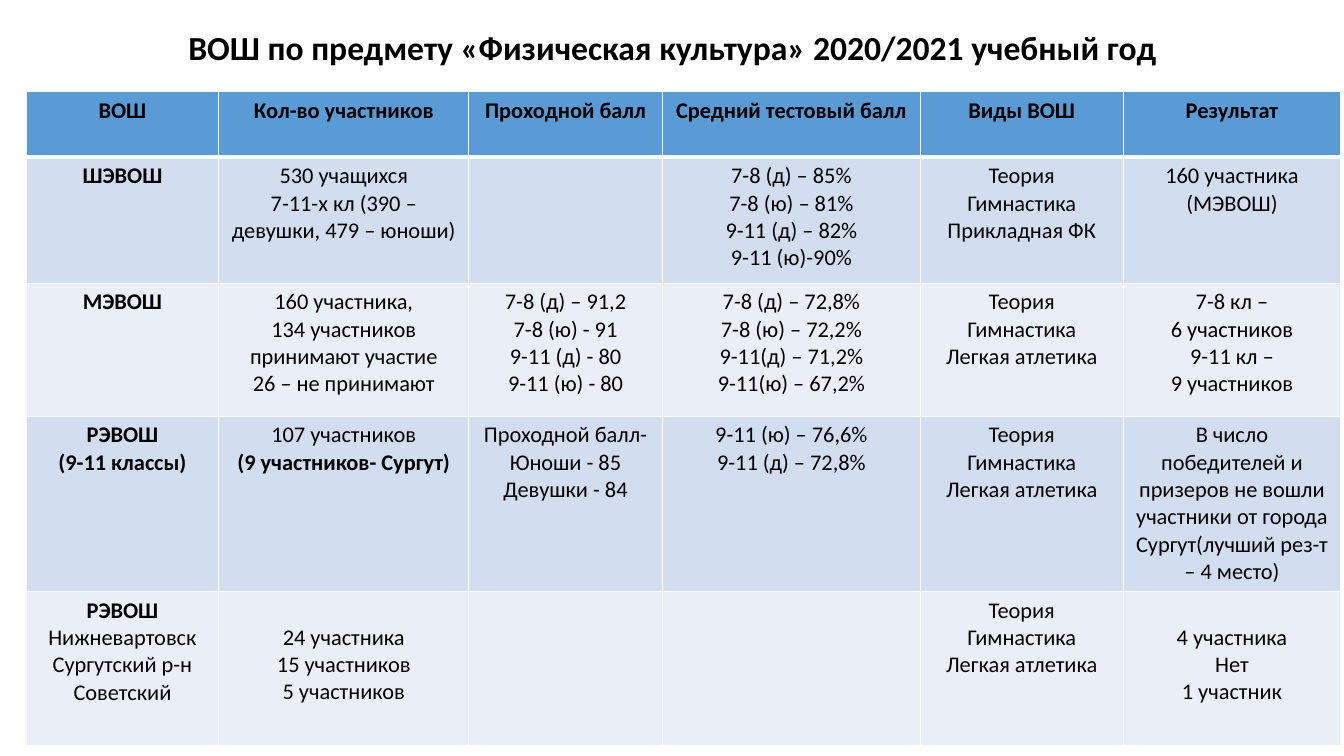
from dataclasses import dataclass

from lxml import etree
from pptx import Presentation
from pptx.dml.color import RGBColor
from pptx.enum.text import MSO_ANCHOR, PP_ALIGN
from pptx.oxml.ns import qn
from pptx.util import Inches, Pt

CENTER = PP_ALIGN.CENTER
MIDDLE = MSO_ANCHOR.MIDDLE
BLANK_LAYOUT = 6


@dataclass(frozen=True)
class Theme:
    font: str = "Calibri"
    title_size: int = 24
    table_size: int = 16
    text: str = "000000"
    header: str = "5B9BD5"
    bands: tuple = ("D2DEEF", "EAEFF7")
    border: str = "FFFFFF"
    thin: int = 1
    thick: int = 3


THEME = Theme()

# Table content: each cell is a list of lines
TITLE = "ВОШ по предмету «Физическая культура» 2020/2021 учебный год"
COLUMN_WIDTHS = (1.91, 2.48, 1.92, 2.56, 2.01, 2.16)
ROW_HEIGHTS = (0.65, 1.25, 1.32, 1.74, 1.53)
HEADERS = ["ВОШ", "Кол-во участников", "Проходной балл",
           "Средний тестовый балл", "Виды ВОШ", "Результат"]
SCHOOL_EVENTS = ["Теория", "Гимнастика", "Прикладная ФК"]
EVENTS = ["Теория", "Гимнастика", "Легкая атлетика"]
STAGES = [
    [["ШЭВОШ"],
     ["530 учащихся", "7-11-х кл (390 – девушки, 479 – юноши)"],
     [],
     ["7-8 (д) – 85%", "7-8 (ю) – 81%", "9-11 (д) – 82%", "9-11 (ю)-90%"],
     SCHOOL_EVENTS,
     ["160 участника", "(МЭВОШ)"]],
    [["МЭВОШ"],
     ["160 участника,", "134 участников принимают участие", "26 – не принимают"],
     ["7-8 (д) – 91,2", "7-8 (ю) - 91", "9-11 (д) - 80", "9-11 (ю) - 80"],
     ["7-8 (д) – 72,8%", "7-8 (ю) – 72,2%", "9-11(д) – 71,2%", "9-11(ю) – 67,2%"],
     EVENTS,
     ["7-8 кл –", "6 участников", "9-11 кл –", "9 участников"]],
    [["РЭВОШ", "(9-11 классы)"],
     ["107 участников", "(9 участников- Сургут)"],
     ["Проходной балл-", "Юноши - 85", "Девушки - 84"],
     ["9-11 (ю) – 76,6%", "9-11 (д) – 72,8%"],
     EVENTS,
     ["В число победителей и призеров не вошли участники от города "
      "Сургут(лучший рез-т – 4 место)"]],
    [["РЭВОШ", "Нижневартовск", "Сургутский р-н", "Советский"],
     ["24 участника", "15 участников", "5 участников"],
     [],
     [],
     EVENTS,
     ["4 участника", "Нет", "1 участник"]],
]
BOLD_LINES = {*HEADERS, "ШЭВОШ", "МЭВОШ", "РЭВОШ", "(9-11 классы)",
              "(9 участников- Сургут)"}
# Cells of the last row that start level with the second line of its first cell
LOWERED_CELLS = {(4, 1), (4, 5)}
LOWERED_MARGIN = 0.32


def write_line(para, text, size, bold):
    para.alignment = CENTER
    span = para.add_run()
    span.text = text
    formats = {"name": THEME.font, "size": Pt(size), "bold": bold}
    for name, value in formats.items():
        setattr(span.font, name, value)
    span.font.color.rgb = RGBColor.from_string(THEME.text)


def write_lines(frame, lines):
    for index, line in enumerate(lines):
        para = frame.add_paragraph() if index else frame.paragraphs[0]
        write_line(para, line, THEME.table_size, line in BOLD_LINES)


def add_title(page):
    box = page.shapes.add_textbox(Inches(0.92), Inches(0.21), Inches(11.5), Inches(0.56))
    frame = box.text_frame
    frame.word_wrap = True
    frame.vertical_anchor = MIDDLE
    frame.paragraphs[0].line_spacing = 0.9
    write_line(frame.paragraphs[0], TITLE, THEME.title_size, True)


def set_borders(cell, row):
    widths = {
        "a:lnL": THEME.thin,
        "a:lnR": THEME.thin,
        "a:lnT": THEME.thick if row == 1 else THEME.thin,
        "a:lnB": THEME.thick if row == 0 else THEME.thin,
    }
    properties = cell._tc.get_or_add_tcPr()
    for tag, width in widths.items():
        line = etree.SubElement(properties, qn(tag), w=str(Pt(width)))
        fill = etree.SubElement(line, qn("a:solidFill"))
        etree.SubElement(fill, qn("a:srgbClr"), val=THEME.border)


def fill_cell(cell, row, column, lines):
    set_borders(cell, row)
    color = THEME.bands[(row - 1) % 2] if row else THEME.header
    cell.fill.solid()
    cell.fill.fore_color.rgb = RGBColor.from_string(color)
    if (row, column) in LOWERED_CELLS:
        cell.margin_top = Inches(LOWERED_MARGIN)
    write_lines(cell.text_frame, lines)


def add_stage_table(page):
    rows = [[[header] for header in HEADERS], *STAGES]
    table = page.shapes.add_table(
        len(rows), len(HEADERS), Inches(0.26), Inches(0.91),
        Inches(sum(COLUMN_WIDTHS)), Inches(sum(ROW_HEIGHTS))).table
    for column, width in zip(table.columns, COLUMN_WIDTHS):
        column.width = Inches(width)
    for table_row, height in zip(table.rows, ROW_HEIGHTS):
        table_row.height = Inches(height)
    for row, cells in enumerate(rows):
        for column, lines in enumerate(cells):
            fill_cell(table.cell(row, column), row, column, lines)


def main():
    deck = Presentation()
    deck.slide_width = Inches(13.33)
    deck.slide_height = Inches(7.5)
    page = deck.slides.add_slide(deck.slide_layouts[BLANK_LAYOUT])
    add_title(page)
    add_stage_table(page)
    deck.save("out.pptx")


if __name__ == "__main__":
    main()
